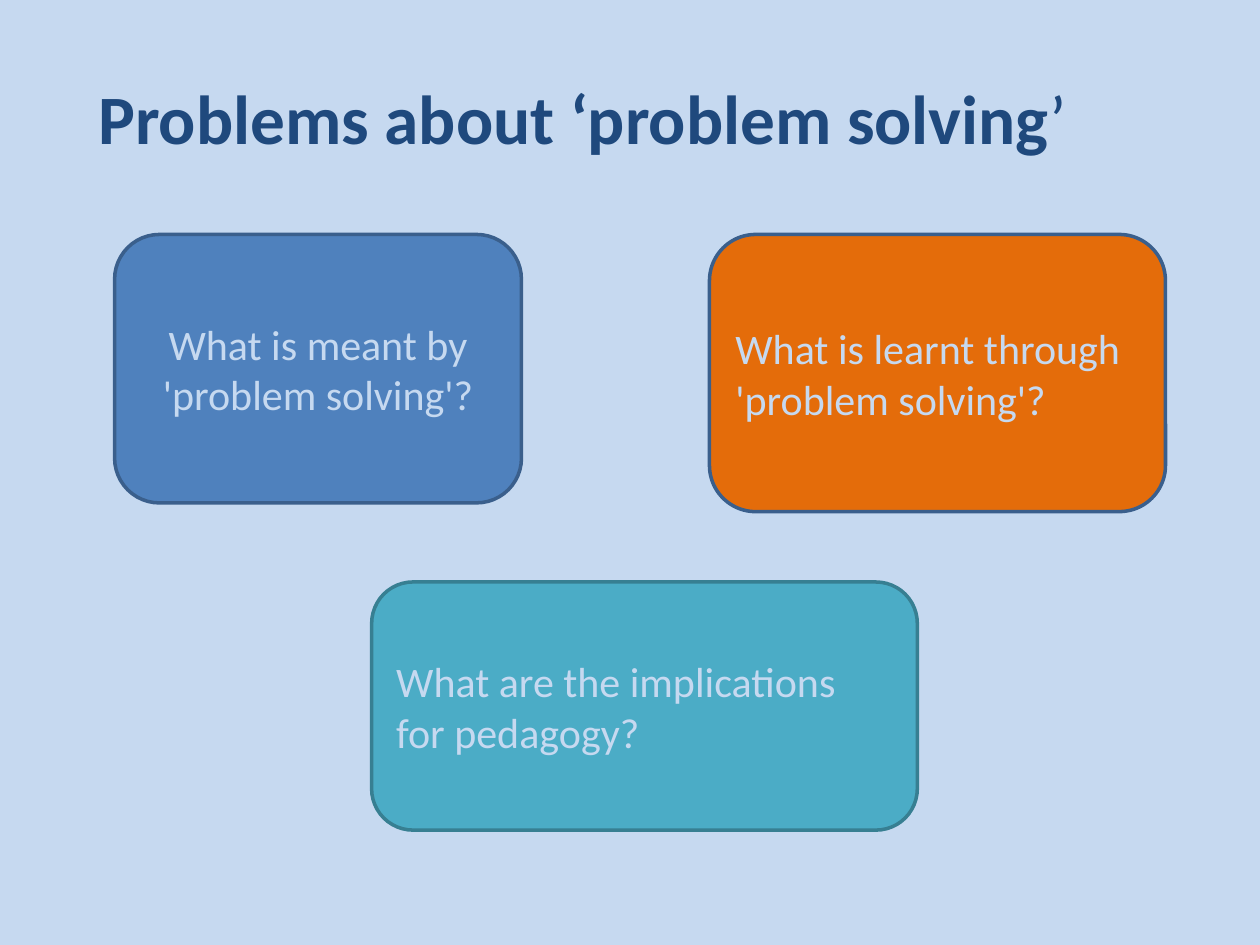
from pptx import Presentation
from pptx.dml.color import RGBColor
from pptx.enum.shapes import MSO_SHAPE as SHAPE
from pptx.enum.text import MSO_ANCHOR as ANCHOR, PP_ALIGN as ALIGN
from pptx.util import Pt

FONT = "Calibri"
PALE = "C6D9F0"
NAVY = "1F497D"


def color(value):
    return RGBColor.from_string(value)


def place(sp, box):
    sp.left, sp.top, sp.width, sp.height = (Pt(v) for v in box)


def style_paragraph(p, size, font_color, align):
    p.alignment = align
    p.font.name = FONT
    p.font.size = Pt(size)
    p.font.color.rgb = color(font_color)


def add_title(slide, box):
    sp = slide.shapes.title
    place(sp, box)
    tf = sp.text_frame
    tf.word_wrap = True
    tf.vertical_anchor = ANCHOR.MIDDLE
    tf.margin_left = Pt(25)  # moves the centred line slightly right
    p = tf.paragraphs[0]
    style_paragraph(p, 39.6, NAVY, ALIGN.CENTER)
    for text, bold in (("Problems about ‘problem solving", True), ("’", False)):
        r = p.add_run()
        r.text = text
        r.font.bold = bold


def add_question(slide, box, text, fill, line, align):
    sp = slide.shapes.add_shape(SHAPE.ROUNDED_RECTANGLE, *(Pt(v) for v in box))
    sp.shadow.inherit = False
    sp.fill.solid()
    sp.fill.fore_color.rgb = color(fill)
    sp.line.color.rgb = color(line)
    sp.line.width = Pt(2)
    tf = sp.text_frame
    tf.word_wrap = True
    tf.vertical_anchor = ANCHOR.MIDDLE
    p = tf.paragraphs[0]
    p.text = text
    style_paragraph(p, 24, PALE, align)


def main():
    prs = Presentation()
    prs.slide_width, prs.slide_height = Pt(720), Pt(540)
    slide = prs.slides.add_slide(prs.slide_layouts[5])

    # Background and title
    slide.background.fill.solid()
    slide.background.fill.fore_color.rgb = color(PALE)
    add_title(slide, (0, 21.6, 648, 90))

    # Question cards: box, text, fill, line, alignment
    cards = [
        ((65.5, 134, 232.5, 153.4), "What is meant by 'problem solving'?",
         "4F81BD", "3A5F8C", ALIGN.CENTER),
        ((405.4, 134, 260.6, 158.4), "What is learnt through 'problem solving'?",
         "E46C0A", "3A5F8C", ALIGN.LEFT),
        ((212.4, 332.6, 311.8, 141.8), "What are the implications for pedagogy?",
         "4BACC6", "377F92", ALIGN.LEFT),
    ]
    for card in cards:
        add_question(slide, *card)

    prs.save("out.pptx")


if __name__ == "__main__":
    main()
